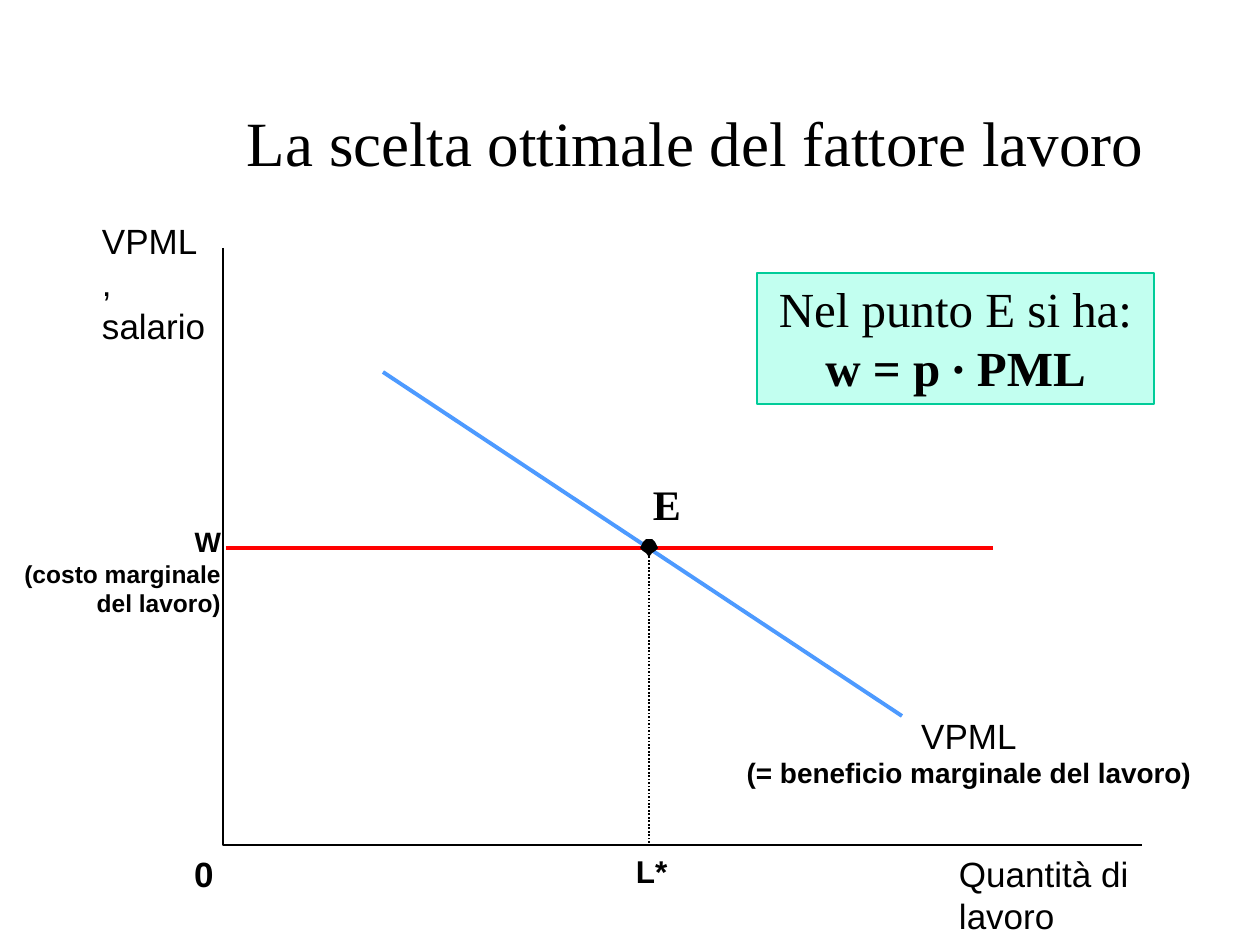
from dataclasses import dataclass

from lxml import etree
from pptx import Presentation
from pptx import util as u
from pptx.dml.color import RGBColor
from pptx.enum import dml, shapes, text
from pptx.oxml.ns import qn

SCALE = 914400 / 126
BLACK = "000000"
SANS, SERIF = "Arial", "Times New Roman"
LEFT, MID, RIGHT = text.PP_ALIGN.LEFT, text.PP_ALIGN.CENTER, text.PP_ALIGN.RIGHT


@dataclass
class Row:
    words: str
    size: int
    bold: bool = False


@dataclass
class Label:
    box: tuple[int, int, int, int]
    rows: list[Row]
    align: text.PP_ALIGN = LEFT
    wrap: bool = True
    font: str = SANS
    inset: tuple[int, int] = (0, 0)


@dataclass
class Line:
    start: tuple[int, int]
    end: tuple[int, int]
    color: str
    width: float
    dash: dml.MSO_LINE | None = None


def px(n: float) -> u.Emu:
    return u.Emu(round(n * SCALE))


def rgb(code: str) -> RGBColor:
    return RGBColor.from_string(code)


def write(shape, rows: list[Row], *, font=SANS, align=LEFT, wrap=True,
          inset=(13, 6), anchor=text.MSO_ANCHOR.TOP) -> None:
    frame = shape.text_frame
    frame.word_wrap = wrap
    frame.auto_size = text.MSO_AUTO_SIZE.NONE
    frame.vertical_anchor = anchor
    frame.margin_left = frame.margin_right = px(inset[0])
    frame.margin_top = frame.margin_bottom = px(inset[1])
    for i, row in enumerate(rows):
        para = frame.paragraphs[0] if i == 0 else frame.add_paragraph()
        para.alignment = align
        run = para.add_run()
        run.text = row.words
        run.font.name = font
        run.font.size = u.Pt(row.size)
        run.font.bold = row.bold
        run.font.color.rgb = rgb(BLACK)


def put_label(slide, label: Label) -> None:
    box = slide.shapes.add_textbox(*map(px, label.box))
    write(box, label.rows, font=label.font, align=label.align,
          wrap=label.wrap, inset=label.inset)


def put_line(slide, line: Line) -> None:
    item = slide.shapes.add_connector(
        shapes.MSO_CONNECTOR.STRAIGHT, *map(px, line.start + line.end))
    item.line.color.rgb = rgb(line.color)
    item.line.width = u.Pt(line.width)
    if line.dash:
        item.line.dash_style = line.dash
    etree.SubElement(item._element.spPr, qn("a:effectLst"))


def put_path(slide, points: list[tuple[int, int]], close: bool):
    """Draw a closed path filled black, or an open one as a thin line."""
    maker = slide.shapes.build_freeform(*points[0], scale=SCALE)
    maker.add_line_segments(points[1:], close=close)
    shape = maker.convert_to_shape()
    shape.shadow.inherit = False
    if close:
        shape.fill.solid()
        shape.fill.fore_color.rgb = rgb(BLACK)
        shape.line.fill.background()
    else:
        shape.fill.background()
        shape.line.color.rgb = rgb(BLACK)
        shape.line.width = u.Pt(1)


def put_note(slide) -> None:
    note = slide.shapes.add_shape(
        shapes.MSO_SHAPE.RECTANGLE, *map(px, (757, 273, 397, 131)))
    note.shadow.inherit = False
    note.fill.solid()
    note.fill.fore_color.rgb = rgb("C2FFF0")
    note.line.color.rgb = rgb("00CC99")
    note.line.width = u.Pt(0.75)
    write(note, [Row("Nel punto E si ha:", 28), Row("w = p ∙ PML", 28, True)],
          font=SERIF, align=MID)


EX, EY = 649, 548  # equilibrium point E
LABELS = [
    Label((959, 852, 272, 84), [Row("Quantità di lavoro", 20)]),
    Label((194, 852, 19, 42), [Row("0", 20, True)], wrap=False),
    Label((19, 525, 202, 92),
          [Row("W", 16, True), Row("(costo marginale", 14, True),
           Row("del lavoro)", 14, True)], RIGHT),
    Label((636, 852, 50, 37), [Row("L*", 18, True)], wrap=False),
    Label((746, 714, 446, 110),
          [Row("VPML", 20), Row("(= beneficio marginale del lavoro)", 16, True)],
          MID),
    Label((640, 473, 53, 63), [Row("E", 24, True)], wrap=False,
          font=SERIF, inset=(13, 6)),
    Label((102, 220, 104, 126), [Row("VPML,", 20), Row("salario", 20)]),
]
LINES = [
    Line((226, EY), (993, EY), "FF0000", 2.25),
    Line((EX, 843), (EX, EY), BLACK, 1, dml.MSO_LINE.ROUND_DOT),
    Line((383, 372), (902, 716), "4D9AFF", 2.25),
]
HALF = [(0, 9), (3, 5), (6, 3), (9, 0), (6, -6), (3, -9), (0, -9)]


def main() -> None:
    deck = Presentation()
    deck.slide_width, deck.slide_height = u.Inches(10), u.Inches(7.5)
    slide = deck.slides.add_slide(deck.slide_layouts[5])
    title = slide.shapes.title
    title.left, title.top, title.width, title.height = map(
        px, (168, 73, 1071, 136))
    write(title, [Row("La scelta ottimale del fattore lavoro ", 36)],
          font=SERIF, align=MID, anchor=text.MSO_ANCHOR.MIDDLE)
    for line in LINES:
        put_line(slide, line)
    put_path(slide, [(223, 248), (223, 845), (1142, 845)], False)
    ring = HALF + [(-x, y) for x, y in HALF[-2:0:-1]]
    put_path(slide, [(EX + x, EY + y) for x, y in ring], True)
    for label in LABELS:
        put_label(slide, label)
    put_note(slide)
    deck.save("out.pptx")


if __name__ == "__main__":
    main()
